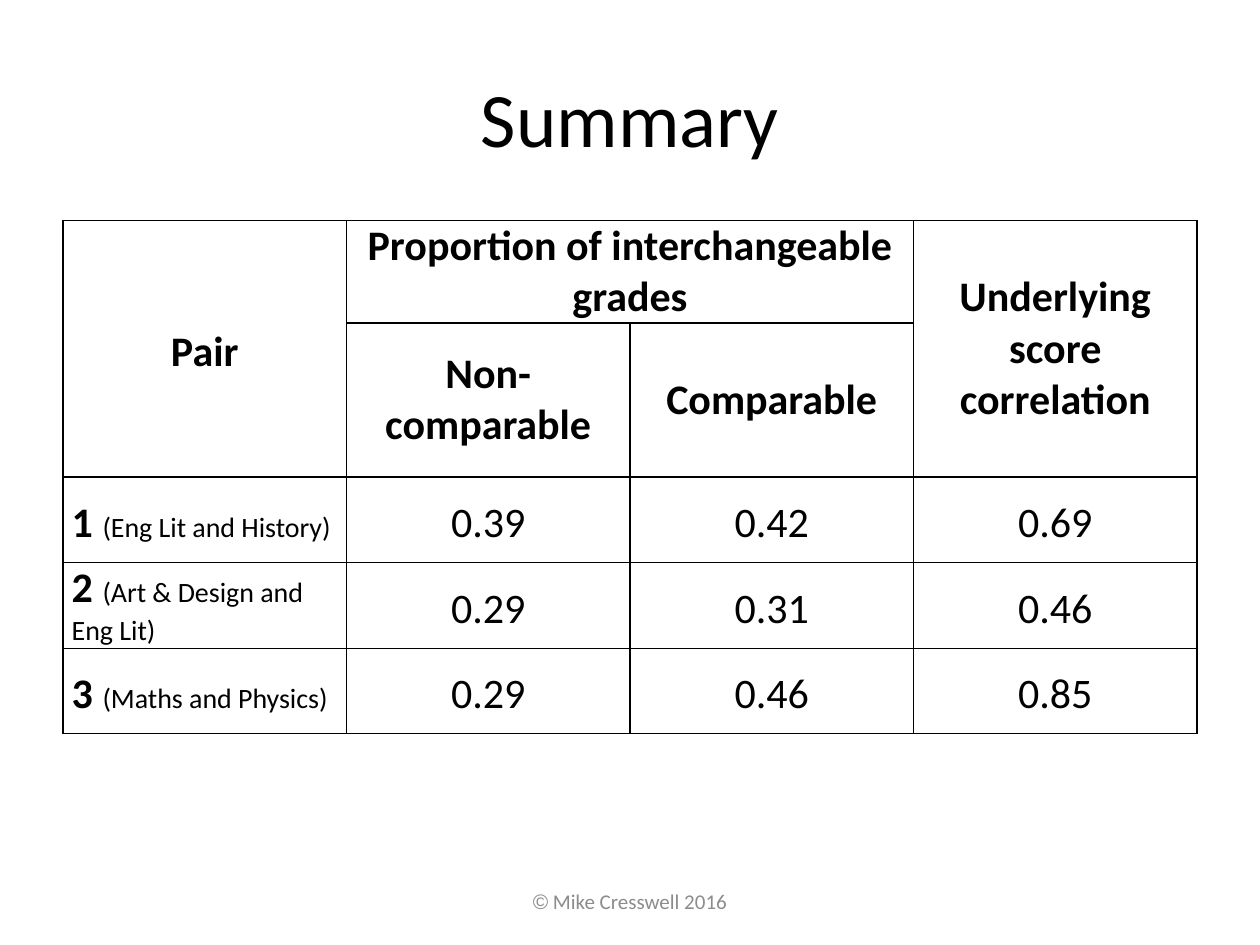
import pptx
import pptx.dml.color
import pptx.enum.text
import pptx.oxml
import pptx.oxml.ns
import pptx.util

Pt = pptx.util.Pt
ALIGN = pptx.enum.text.PP_ALIGN
MIDDLE = pptx.enum.text.MSO_ANCHOR.MIDDLE
BLACK, GREY = "000000", "8C8C8C"

COL_WIDTH = 162
ROW_HEIGHTS = [58.5, 88, 49, 49, 48.5]
# row, column, last row, last column, text, line spacing
HEADERS = [
    (0, 0, 1, 0, "Pair", 1.15),
    (0, 1, 0, 2, "Proportion of interchangeable grades", 1),
    (0, 3, 1, 3, "Underlying score correlation", 1),
    (1, 1, 1, 1, "Non-comparable", 1),
    (1, 2, 1, 2, "Comparable", 1),
]
# pair, line spacing of its label, values
PAIRS = [
    ("Eng Lit and History", 1.15, ["0.39", "0.42", "0.69"]),
    ("Art & Design and Eng Lit", 1, ["0.29", "0.31", "0.46"]),
    ("Maths and Physics", 1.15, ["0.29", "0.46", "0.85"]),
]


def rgb(color):
    return pptx.dml.color.RGBColor.from_string(color)


def write(p, runs, align=ALIGN.CENTER, spacing=1):
    """Fill a paragraph with (text, size, bold, colour, font) runs."""
    p.alignment = align
    p.line_spacing = spacing
    for text, size, bold, color, font in runs:
        r = p.add_run()
        r.text = text
        r.font.size = Pt(size)
        r.font.bold = bold
        r.font.name = font
        r.font.color.rgb = rgb(color)


def add_title(s, text):
    sp = s.shapes.title
    sp.left, sp.top, sp.width, sp.height = Pt(36), Pt(21.6), Pt(648), Pt(90)
    sp.text_frame.vertical_anchor = MIDDLE
    write(sp.text_frame.paragraphs[0], [(text, 44, False, BLACK, "Calibri")])


def add_footer(s):
    sp = s.shapes.add_textbox(Pt(246), Pt(500.5), Pt(228), Pt(28.8))
    tf = sp.text_frame
    tf.word_wrap = True
    tf.vertical_anchor = MIDDLE
    write(tf.paragraphs[0], [("©", 12, False, GREY, "Arial"),
                             (" Mike Cresswell 2016", 12, False, GREY, "Calibri")])


def format_cell(cell):
    """Give a cell thin black borders, no fill and tight margins."""
    cell.vertical_anchor = MIDDLE
    cell.margin_left = cell.margin_right = Pt(5)
    cell.margin_top = cell.margin_bottom = 0
    tcPr = cell._tc.get_or_add_tcPr()
    for side in ("lnL", "lnR", "lnT", "lnB"):
        tcPr.append(pptx.oxml.parse_xml(
            f'<a:{side} {pptx.oxml.ns.nsdecls("a")} w="{Pt(1)}"><a:solidFill>'
            f'<a:srgbClr val="{BLACK}"/></a:solidFill></a:{side}>'))
    cell.fill.background()


def add_summary_table(s):
    table = s.shapes.add_table(len(ROW_HEIGHTS), 4, Pt(36), Pt(126),
                               Pt(4 * COL_WIDTH), Pt(sum(ROW_HEIGHTS))).table
    table.first_row = table.horz_banding = False
    for column in table.columns:
        column.width = Pt(COL_WIDTH)
    for row, height in zip(table.rows, ROW_HEIGHTS):
        row.height = Pt(height)
    for cell in table.iter_cells():
        format_cell(cell)

    # Headings
    for row, col, last_row, last_col, text, spacing in HEADERS:
        cell = table.cell(row, col)
        if (row, col) != (last_row, last_col):
            cell.merge(table.cell(last_row, last_col))
        write(cell.text_frame.paragraphs[0],
              [(text, 24, True, BLACK, "Calibri")], spacing=spacing)

    # Subject pairs and their values
    for number, (pair, spacing, values) in enumerate(PAIRS, 1):
        cells = table.rows[number + 1].cells
        write(cells[0].text_frame.paragraphs[0],
              [(f"{number} ", 24, True, BLACK, "Calibri"),
               (f"({pair})", 16, False, BLACK, "Calibri")],
              ALIGN.LEFT, spacing)
        for col, value in enumerate(values, 1):
            write(cells[col].text_frame.paragraphs[0],
                  [(value, 24, False, BLACK, "Calibri")], spacing=1.15)


def main():
    prs = pptx.Presentation()
    prs.slide_width, prs.slide_height = Pt(720), Pt(540)
    s = prs.slides.add_slide(prs.slide_layouts[5])
    add_title(s, "Summary")
    add_summary_table(s)
    add_footer(s)
    prs.save("out.pptx")


if __name__ == "__main__":
    main()
